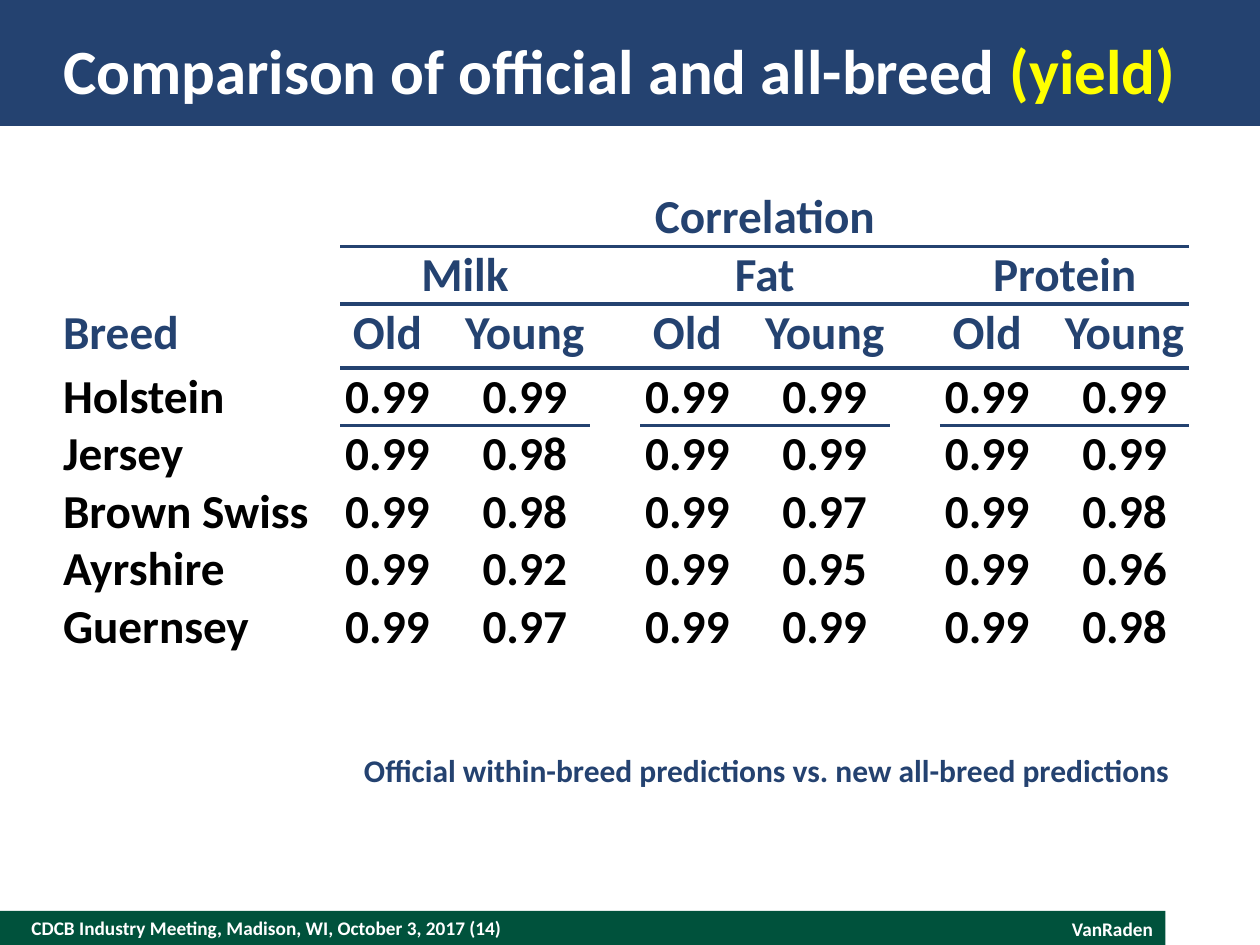
from dataclasses import dataclass

from lxml import etree
from pptx import Presentation
from pptx.dml.color import RGBColor
from pptx.enum.shapes import MSO_SHAPE
from pptx.enum.text import MSO_ANCHOR, MSO_AUTO_SIZE, PP_ALIGN
from pptx.oxml.ns import qn
from pptx.util import Inches, Pt

NAVY = RGBColor(0x24, 0x42, 0x70)
GREEN = RGBColor(0x00, 0x52, 0x3C)
WHITE = RGBColor(0xFF, 0xFF, 0xFF)
YELLOW = RGBColor(0xFF, 0xFF, 0x00)
BLACK = RGBColor(0x00, 0x00, 0x00)
RECTANGLE = MSO_SHAPE.RECTANGLE
LEFT, CENTER, RIGHT = PP_ALIGN.LEFT, PP_ALIGN.CENTER, PP_ALIGN.RIGHT
TOP, MIDDLE, BOTTOM = MSO_ANCHOR.TOP, MSO_ANCHOR.MIDDLE, MSO_ANCHOR.BOTTOM
FIT_NONE, FIT_SHAPE = MSO_AUTO_SIZE.NONE, MSO_AUTO_SIZE.SHAPE_TO_FIT_TEXT
NO_STYLE = "{2D5ABB26-0587-4C30-8999-92F81FD0307C}"

TRAITS = ["Milk", "Fat", "Protein"]
GROUP_WIDTHS = [0.75, 0.2, 1.03]
GROUP_STEP = len(GROUP_WIDTHS) + 1
COLUMN_WIDTHS = [2.2] + (GROUP_WIDTHS + [0.4]) * 2 + GROUP_WIDTHS
ROW_HEIGHTS = [0.45, 0.45, 0.5] + [0.45] * 5
# Old and young correlations for each trait in turn
BREEDS = {
    "Holstein": ["0.99", "0.99", "0.99", "0.99", "0.99", "0.99"],
    "Jersey": ["0.99", "0.98", "0.99", "0.99", "0.99", "0.99"],
    "Brown Swiss": ["0.99", "0.98", "0.99", "0.97", "0.99", "0.98"],
    "Ayrshire": ["0.99", "0.92", "0.99", "0.95", "0.99", "0.96"],
    "Guernsey": ["0.99", "0.97", "0.99", "0.99", "0.99", "0.98"],
}


@dataclass
class Bar:
    top: float
    width: float
    height: float
    color: RGBColor


@dataclass
class Label:
    text: str
    box: tuple
    size: int
    color: RGBColor
    align: int = LEFT
    anchor: int = TOP
    margin: float | None = None
    wrap: bool = True
    fit: int = FIT_NONE


BARS = [Bar(7.23, 9.25, 0.27, GREEN), Bar(0, 10, 1, NAVY)]
LABELS = [
    Label("CDCB Industry Meeting, Madison, WI, October 3, 2017 (14)",
          (0.25, 7.23, 7, 0.27), 11, WHITE, anchor=MIDDLE, margin=0),
    Label("VanRaden", (7.25, 7.23, 2, 0.29), 11, WHITE, RIGHT, fit=FIT_SHAPE),
    Label("Official within-breed predictions vs. new all-breed predictions",
          (2.79, 5.91, 6.62, 0.4), 18, NAVY, wrap=False, fit=FIT_SHAPE),
]


def set_all(target, values: dict) -> None:
    for name, value in values.items():
        setattr(target, name, value)


def margins(value: float) -> dict:
    return {f"margin_{side}": Inches(value) for side in ("left", "top", "right", "bottom")}


def add_run(paragraph, text: str, size: int, color: RGBColor) -> None:
    run = paragraph.add_run()
    run.text = text
    set_all(run.font, {"name": "Calibri", "size": Pt(size), "bold": True})
    run.font.color.rgb = color


def add_bar(slide, bar: Bar) -> None:
    shape = slide.shapes.add_shape(
        RECTANGLE, 0, Inches(bar.top), Inches(bar.width), Inches(bar.height))
    shape.shadow.inherit = False
    shape.fill.solid()
    shape.fill.fore_color.rgb = bar.color
    shape.line.fill.background()
    # Bars lie behind the title
    slide.shapes.title.element.addprevious(shape.element)


def add_label(slide, label: Label) -> None:
    frame = slide.shapes.add_textbox(*map(Inches, label.box)).text_frame
    set_all(frame, {"word_wrap": label.wrap, "auto_size": label.fit,
                    "vertical_anchor": label.anchor})
    if label.margin is not None:
        set_all(frame, margins(label.margin))
    paragraph = frame.paragraphs[0]
    paragraph.alignment = label.align
    add_run(paragraph, label.text, label.size, label.color)


def fill_title(title) -> None:
    set_all(title, {"left": Inches(0.5), "top": Inches(0.2),
                    "width": Inches(9), "height": Inches(0.7)})
    set_all(title.text_frame, {"vertical_anchor": MIDDLE, "word_wrap": True,
                               "auto_size": FIT_NONE, **margins(0)})
    paragraph = title.text_frame.paragraphs[0]
    paragraph.alignment = LEFT
    add_run(paragraph, "Comparison of official and all-breed ", 36, WHITE)
    add_run(paragraph, "(yield)", 36, YELLOW)


def add_border(cell, tag: str) -> None:
    properties = cell._tc.get_or_add_tcPr()
    line = etree.SubElement(properties, qn(tag), w=str(Pt(2.25)))
    fill = etree.SubElement(line, qn("a:solidFill"))
    etree.SubElement(fill, qn("a:srgbClr"), val=str(NAVY))


def add_rule(table, row: int, columns) -> None:
    """Draw a line between a row and the next one."""
    for column in columns:
        add_border(table.cell(row, column), "a:lnB")
        add_border(table.cell(row + 1, column), "a:lnT")


def write_cell(table, row: int, column: int, text: str, color: RGBColor,
               align: int = CENTER) -> None:
    paragraph = table.cell(row, column).text_frame.paragraphs[0]
    paragraph.alignment = align
    add_run(paragraph, text, 27, color)


def add_breed_table(slide) -> None:
    table_frame = slide.shapes.add_table(
        len(ROW_HEIGHTS), len(COLUMN_WIDTHS), Inches(0.5), Inches(1.5),
        Inches(sum(COLUMN_WIDTHS)), Inches(sum(ROW_HEIGHTS)))
    table = table_frame.table
    set_all(table, {"first_row": False, "horz_banding": False})
    table._tbl.tblPr.find(qn("a:tableStyleId")).text = NO_STYLE
    for column, width in zip(table.columns, COLUMN_WIDTHS):
        column.width = Inches(width)
    for row, height in zip(table.rows, ROW_HEIGHTS):
        row.height = Inches(height)

    # Header rules, from the top down
    last = len(COLUMN_WIDTHS) - 1
    starts = [1 + index * GROUP_STEP for index in range(len(TRAITS))]
    for row in (0, 1):
        add_rule(table, row, range(1, last + 1))
    for start in starts:
        add_rule(table, 2, range(start, start + len(GROUP_WIDTHS)))

    # Cell format
    for cell in table.iter_cells():
        set_all(cell, {"vertical_anchor": BOTTOM, **margins(0)})
        cell.fill.background()

    # Header text
    table.cell(0, 0).merge(table.cell(2, 0))
    table.cell(0, 1).merge(table.cell(0, last))
    write_cell(table, 0, 0, "Breed", NAVY, LEFT)
    write_cell(table, 0, 1, "Correlation", NAVY)
    table.cell(0, 0).margin_bottom = Inches(0.05)
    for trait, start in zip(TRAITS, starts):
        table.cell(1, start).merge(table.cell(1, start + 2))
        write_cell(table, 1, start, trait, NAVY)
        for column, text in ((start, "Old"), (start + 2, "Young")):
            write_cell(table, 2, column, text, NAVY)
            table.cell(2, column).margin_bottom = Inches(0.05)

    # Breed rows
    value_columns = [start + offset for start in starts for offset in (0, 2)]
    for row, (breed, values) in enumerate(BREEDS.items(), start=3):
        write_cell(table, row, 0, breed, BLACK, LEFT)
        for column, value in zip(value_columns, values):
            write_cell(table, row, column, value, BLACK)


def main() -> None:
    presentation = Presentation()
    set_all(presentation, {"slide_width": Inches(10), "slide_height": Inches(7.5)})
    slide = presentation.slides.add_slide(presentation.slide_layouts[5])
    for bar in BARS:
        add_bar(slide, bar)
    fill_title(slide.shapes.title)
    add_breed_table(slide)
    for label in LABELS:
        add_label(slide, label)
    presentation.save("out.pptx")


if __name__ == "__main__":
    main()
